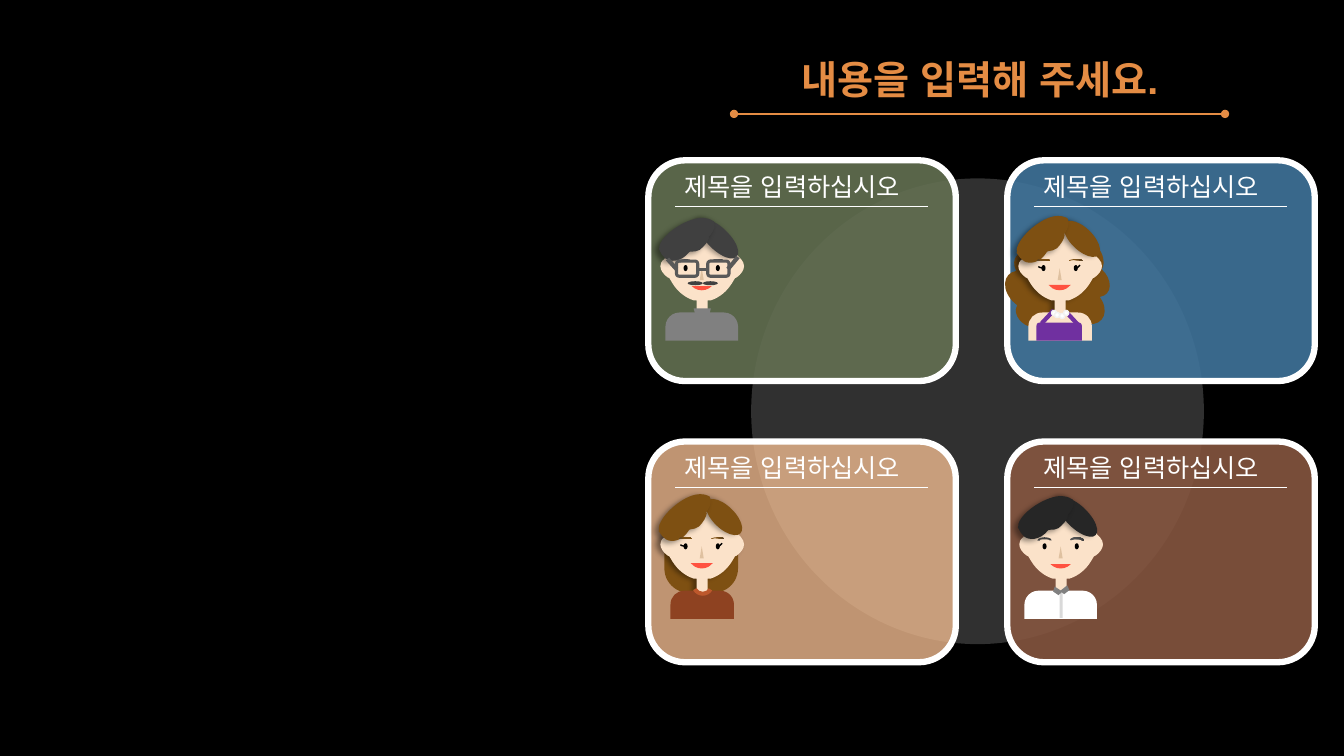
from collections import namedtuple
from lxml.etree import SubElement
from pptx import Presentation
from pptx.dml.color import RGBColor
from pptx.enum.shapes import MSO_CONNECTOR, MSO_SHAPE as Kind
from pptx.enum.text import MSO_ANCHOR, MSO_AUTO_SIZE, PP_ALIGN
from pptx.oxml.ns import qn
from pptx.util import Inches, Pt

WHITE, BLACK, ORANGE = "FFFFFF", "000000", "E48C44"
SKIN, LIPS, BROWN, DARK_BROWN = "FBE2C9", "FF5240", "7E5012", "554129"
GREY, FRAME, CHARCOAL, PURPLE = "808080", "595959", "404040", "7030A0"
GRID_LEFT, GRID_TOP, COLUMN, ROW = 6.43, 1.59, 3.56, 2.79
LEFT_EYE, RIGHT_EYE = 0.18, 0.5

# Outlines: a pair is a corner, six numbers are a Bézier curve.
HEAD = [(.41, 0), (.59, 0, .73, .13, .76, .31), (.77, .34), (.8, .37),
        (.82, .39, .83, .42, .83, .44), (.83, .48, .8, .52, .76, .55), (.74, .56), (.71, .61),
        (.66, .69, .59, .75, .5, .78), (.47, .78), (.47, .98), (.47, .99, .46, .99, .45, .99),
        (.38, .99), (.37, .99, .36, .99, .36, .98), (.36, .78), (.33, .78),
        (.24, .75, .17, .69, .12, .61), (.09, .56), (.07, .55), (.03, .52, 0, .48, 0, .44),
        (0, .42, .01, .39, .04, .37), (.06, .34), (.07, .31), (.1, .13, .24, 0, .41, 0)]
SHOULDERS = [(.24, .9), (.3, .9, .28, .9, .34, .9), (.42, .93, .4, .96, .48, .9), (.59, .9),
             (.67, .9, .73, .96, .73, 1.04), (.73, 1.18), (.1, 1.18), (.1, 1.04),
             (.1, .96, .16, .9, .24, .9)]
FRINGE = [(.55, .06), (.58, .08, .6, .11, .61, .13), (.61, .17, .57, .21, .52, .23),
          (.49, .24), (.49, .25), (.46, .28, .41, .3, .35, .31), (.32, .31, .29, .3, .26, .28),
          (.25, .28), (.25, .28), (.22, .29, .19, .3, .16, .3), (.06, .3, 0, .24, 0, .17),
          (0, .14, 0, .13, 0, .11), (.01, .1), (.03, .05, .16, 0, .31, 0),
          (.41, 0, .5, .02, .55, .06)]

Canvas = namedtuple("Canvas", "shapes left top")


def rgb(code):
    return RGBColor.from_string(code)


def paint(shape, fill=None, line=None, alpha=None, shadow=None):
    """fill: hex or gradient stops; line: (hex, points); shadow: direction in degrees."""
    shape.shadow.inherit = False
    properties = shape.element.spPr
    if fill is None:
        shape.fill.background()
    elif isinstance(fill, str):
        shape.fill.solid()
        shape.fill.fore_color.rgb = rgb(fill)
    else:
        shape.fill.gradient()
        shape.fill.gradient_angle = 0
        for stop, (position, code) in zip(shape.fill.gradient_stops, fill):
            stop.position, stop.color.rgb = position, rgb(code)
    if alpha:
        color = properties.find(qn("a:solidFill"))[0]
        SubElement(color, qn("a:alpha"), val=str(alpha * 1000))
    if line:
        shape.line.color.rgb, shape.line.width = rgb(line[0]), Pt(line[1])
    else:
        shape.line.fill.background()
    if shadow is not None:
        outer = SubElement(properties.find(qn("a:effectLst")), qn("a:outerShdw"),
                           blurRad=str(Pt(4)), dist=str(Pt(3)), dir=str(shadow * 60000),
                           algn="ctr", rotWithShape="0")
        color = SubElement(outer, qn("a:srgbClr"), val=BLACK)
        SubElement(color, qn("a:alpha"), val="40000")


def add_part(canvas, kind, box, fill=None, turn=0, adjust=(), angles=(), **style):
    left, top, width, height = box
    shape = canvas.shapes.add_shape(kind, Inches(canvas.left + left), Inches(canvas.top + top),
                                    Inches(width), Inches(height))
    values = [angle * 0.6 for angle in angles] + list(adjust)
    for index, value in enumerate(values):
        shape.adjustments[index] = value
    shape.rotation = turn
    paint(shape, fill, **style)


def bend(shape, curves):
    """Turn the sides that have an entry in curves into Bézier curves."""
    sides = list(shape.element.spPr.iter(qn("a:lnTo")))
    for side, points in zip(sides, curves):
        if len(points) == 1:
            continue
        curve = SubElement(side.getparent(), qn("a:cubicBezTo"))
        for x, y in points:
            SubElement(curve, qn("a:pt"), x=str(x - shape.left), y=str(y - shape.top))
        side.getparent().replace(side, curve)


def add_outline(canvas, outline, fill, turn=0, offset=(0, 0), **style):
    left, top = canvas.left + offset[0], canvas.top + offset[1]
    start, *sides = [[(Inches(left + x), Inches(top + y)) for x, y in zip(item[::2], item[1::2])]
                     for item in outline]
    builder = canvas.shapes.build_freeform(*start[0], scale=1.0)
    builder.add_line_segments([points[-1] for points in sides], close=True)
    shape = builder.convert_to_shape()
    bend(shape, sides)
    shape.rotation = turn
    paint(shape, fill, **style)


def add_line(canvas, start, end, color, width, ends=None):
    ends_at = [Inches(origin + value) for point in (start, end)
               for origin, value in zip((canvas.left, canvas.top), point)]
    line = canvas.shapes.add_connector(MSO_CONNECTOR.STRAIGHT, *ends_at)
    line.line.color.rgb, line.line.width = rgb(color), Pt(width)
    if ends:
        for tag in ("a:headEnd", "a:tailEnd"):
            SubElement(line.element.spPr.find(qn("a:ln")), qn(tag), type=ends)
    SubElement(line.element.spPr, qn("a:effectLst"))


def write(box, text, font, size, color, bold=False):
    frame = box.text_frame
    frame.text = text
    frame.auto_size = MSO_AUTO_SIZE.SHAPE_TO_FIT_TEXT
    frame.vertical_anchor = MSO_ANCHOR.TOP
    run = frame.paragraphs[0].runs[0]
    span = run.font
    span.name, span.size, span.bold, span.color.rgb = font, Pt(size), bold, rgb(color)
    SubElement(run.font._element, qn("a:ea"), typeface="Arial")
    return frame


def add_title(page):
    title = page.shapes.title
    title.left, title.top, title.width, title.height = map(Inches, (7.33, 0.5, 4.78, 0.57))
    frame = write(title, "내용을 입력해 주세요.", "Arial", 28, ORANGE, bold=True)
    frame.word_wrap = True
    frame.paragraphs[0].alignment = PP_ALIGN.CENTER
    add_line(Canvas(page.shapes, 0, 0), (7.28, 1.13), (12.15, 1.13), ORANGE, 1.75, "oval")


def add_card(page, column, row, color, alpha):
    card = Canvas(page.shapes, GRID_LEFT + column * COLUMN, GRID_TOP + row * ROW)
    add_part(card, Kind.ROUNDED_RECTANGLE, (0, 0, 3.05, 2.19), color,
             alpha=alpha, line=(WHITE, 4.5))
    add_line(card, (0.27, 0.46), (2.77, 0.46), WHITE, 0.5)
    box = page.shapes.add_textbox(Inches(card.left + 0.26), Inches(card.top + 0.06),
                                  Inches(2.53), Inches(0.4))
    write(box, "제목을 입력하십시오", "Calibri", 18, WHITE).word_wrap = False


def start_person(page, left, top):
    return Canvas(page.shapes.add_group_shape().shapes, left, top)


def add_face(person, mouth_angles):
    add_part(person, Kind.CHORD, (.27, .4, .28, .28), LIPS, angles=mouth_angles)
    add_part(person, Kind.ISOSCELES_TRIANGLE, (.39, .46, .04, .12), BROWN, alpha=22)
    for eye in (LEFT_EYE, RIGHT_EYE):
        add_part(person, Kind.OVAL, (eye + .05, .43, .04, .06), BLACK)


def add_man(person, hair, shirt):
    add_outline(person, HEAD, SKIN)
    add_part(person, Kind.ROUND_2_SAME_RECTANGLE, (.05, .9, .72, .28), shirt, adjust=(.5, 0))
    add_part(person, Kind.OVAL, (.32, .06, .51, .22), hair, turn=44.5, shadow=194)
    add_outline(person, FRINGE, hair, turn=331.3, offset=(-.03, .01), shadow=154)
    add_part(person, Kind.BLOCK_ARC, (RIGHT_EYE, .37, .14, .06), [(0, FRAME), (1, CHARCOAL)],
             angles=(180, 3.5), adjust=(.3,))
    add_part(person, Kind.BLOCK_ARC, (LEFT_EYE, .37, .14, .06), CHARCOAL,
             angles=(176, .64), adjust=(.34,))
    add_face(person, (44.46, 135.85))


def add_woman(person, clothes):
    add_outline(person, HEAD, SKIN, shadow=180)
    add_outline(person, SHOULDERS, clothes)
    add_part(person, Kind.OVAL, (.4, .06, .46, .22), BROWN, turn=44.5, shadow=194)
    add_outline(person, FRINGE, BROWN, turn=323.5, offset=(-.05, .01), shadow=154)
    for eye, stops, lash in ((LEFT_EYE, [(0, DARK_BROWN), (.37, BROWN)], (88.02, 133.04)),
                             (RIGHT_EYE, [(.37, BROWN), (1, DARK_BROWN)], (30.3, 68.5))):
        add_part(person, Kind.BLOCK_ARC, (eye, .37, .14, .04), stops)
        add_part(person, Kind.ARC, (eye, .34, .12, .12), line=(BLACK, 1), angles=lash)
    add_face(person, (37.85, 141.6))


def add_woman_in_sweater(person):
    add_part(person, Kind.ROUNDED_RECTANGLE, (.04, .14, .73, .78), BROWN, adjust=(.33,))
    add_woman(person, "8E4221")
    add_part(person, Kind.BLOCK_ARC, (.31, .73, .22, .22), "BD582C",
             angles=(31.69, 150.46), adjust=(.18,))


def add_man_in_white(person):
    add_man(person, "262626", WHITE)
    add_part(person, Kind.RECTANGLE, (.4, .91, .03, .26), "D9D9D9")
    for left, top, turn in ((.41, .87, 142), (.33, .88, 214.2)):
        add_part(person, Kind.TRAPEZOID, (left, top, .09, .05), GREY, turn=turn)


def add_man_with_glasses(person):
    add_man(person, CHARCOAL, GREY)
    add_part(person, Kind.TRAPEZOID, (.33, .86, .17, .05), GREY, turn=180)
    for left in (.16, .47):
        add_part(person, Kind.ROUNDED_RECTANGLE, (left, .39, .21, .15), line=(FRAME, 2.25))
    for start, end, width in (((.37, .47), (.47, .47), 2.25), ((.67, .47), (.77, .35), 3),
                              ((.16, .47), (.07, .37), 3)):
        add_line(person, start, end, FRAME, width)
    for left in (.27, .42):
        add_part(person, Kind.OVAL, (left, .59, .15, .04), CHARCOAL)


def add_woman_in_dress(person):
    add_part(person, Kind.CLOUD, (-.12, .08, 1.06, 1.08), BROWN, turn=311.6)
    add_woman(person, SKIN)
    add_part(person, Kind.ROUND_2_SAME_RECTANGLE, (.18, 1, .45, .18), PURPLE)
    for start, end in (((.35, .88), (.23, 1.01)), ((.47, .89), (.59, 1.02))):
        add_line(person, start, end, PURPLE, 3)
    for left, top in ((.33, .88), (.36, .9), (.41, .91), (.45, .88)):
        add_part(person, Kind.OVAL, (left, top, .05, .05), WHITE, line=("F2F2F2", 1))


def main():
    deck = Presentation()
    deck.slide_width, deck.slide_height = Inches(13.33), Inches(7.5)
    page = deck.slides.add_slide(deck.slide_layouts[5])
    page.background.fill.solid()
    page.background.fill.fore_color.rgb = rgb(BLACK)
    add_part(Canvas(page.shapes, 0, 0), Kind.OVAL, (7.45, 1.77, 4.49, 4.62), WHITE, alpha=19)
    cards = (("637052", 90), ("40749B", 90), ("EFBA8F", 80), ("865640", 90))
    for index, (color, alpha) in enumerate(cards):
        add_card(page, index % 2, index // 2, color, alpha)
    add_title(page)
    people = ((add_woman_in_sweater, 6.55, 4.96), (add_man_in_white, 10.11, 4.96),
              (add_man_with_glasses, 6.55, 2.2), (add_woman_in_dress, 10.1, 2.2))
    for add_person, left, top in people:
        add_person(start_person(page, left, top))
    deck.save("out.pptx")


if __name__ == "__main__":
    main()
